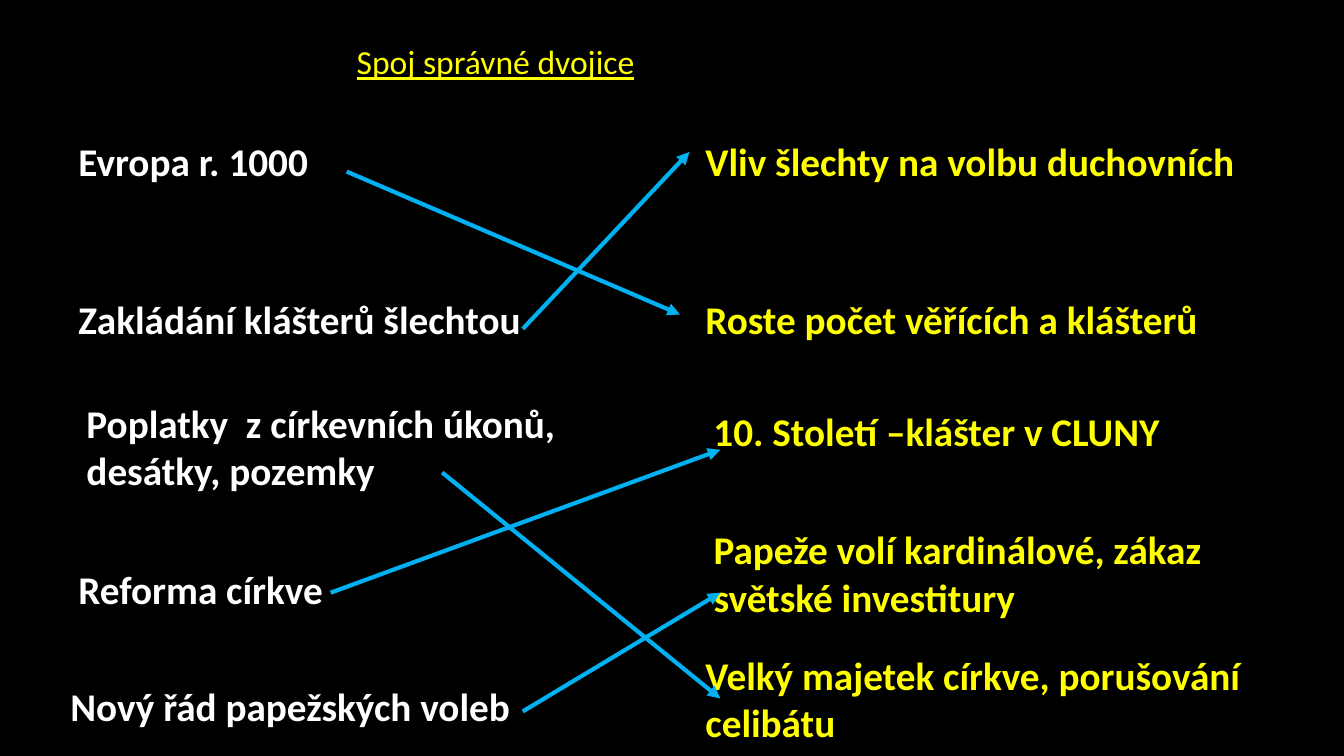
from pptx import Presentation
from pptx import util as u
from pptx.dml.color import RGBColor
from pptx.enum import shapes, text
from pptx.oxml import ns
from lxml import etree

BLACK = RGBColor(0x00, 0x00, 0x00)
WHITE = RGBColor(0xFF, 0xFF, 0xFF)
YELLOW = RGBColor(0xFF, 0xFF, 0x00)
BLUE = RGBColor(0x00, 0xB0, 0xF0)

WIDE, HIGH = u.Inches(13.33), u.Inches(7.5)
ONE, TWO = 7.6, 13.9  # heights of one and two lines of text

# Places are percent of the slide's width and height.
TITLE = ("Spoj správné dvojice", 25.8, 4.8, 23, 6.7)
TERMS = [
    ("Evropa r. 1000", 5.1, 17.5, 32.5, ONE),
    ("Zakládání klášterů šlechtou", 5.1, 38.4, 36, ONE),
    ("Poplatky  z církevních úkonů, desátky, pozemky", 5.7, 52.1, 36.6, TWO),
    ("Reforma církve", 5.1, 74.1, 37.2, ONE),
    ("Nový řád papežských voleb", 4.5, 89.6, 35.4, ONE),
]
MATCHES = [
    ("Vliv šlechty na volbu duchovních", 51.75, 17.5, 42.5, ONE),
    ("Roste počet věřících a klášterů", 51.75, 38.4, 44.9, ONE),
    ("10. Století –klášter v CLUNY", 52.35, 53.2, 38.4, ONE),
    ("Papeže volí kardinálové, zákaz světské investitury",
     52.35, 68.9, 44.3, TWO),
    ("Velký majetek církve, porušování celibátu", 51.75, 85.5, 44.9, TWO),
]
ARROWS = [
    (25.8, 22.7, 50.6, 41.6),
    (38.9, 43.5, 51.3, 20.1),
    (32.9, 62.5, 53.6, 92.4),
    (24.6, 78.4, 53.6, 59.5),
    (38.9, 94.1, 53.6, 78.4),
]


def scale(x, y):
    """Turn percent of the slide into lengths."""
    return int(WIDE * x / 100), int(HIGH * y / 100)


def add_label(slide, words, x, y, w, h, color, size=28, title=False):
    box = slide.shapes.add_textbox(*scale(x, y), *scale(w, h))
    frame = box.text_frame
    frame.text = words
    frame.word_wrap = True
    frame.auto_size = text.MSO_AUTO_SIZE.SHAPE_TO_FIT_TEXT
    font = frame.paragraphs[0].runs[0].font
    font.name = "Calibri"
    font.size = u.Pt(size)
    font.color.rgb = color
    font.bold = not title
    font.underline = title


def add_arrow(slide, x1, y1, x2, y2):
    arrow = slide.shapes.add_connector(
        shapes.MSO_CONNECTOR.STRAIGHT, *scale(x1, y1), *scale(x2, y2))
    arrow.line.color.rgb = BLUE
    arrow.line.width = u.Pt(3)
    line = arrow.line._get_or_add_ln()
    etree.SubElement(line, ns.qn("a:tailEnd"), type="triangle")
    etree.SubElement(arrow._element.spPr, ns.qn("a:effectLst"))


def main():
    deck = Presentation()
    deck.slide_width, deck.slide_height = WIDE, HIGH
    slide = deck.slides.add_slide(deck.slide_layouts[6])
    fill = slide.background.fill
    fill.solid()
    fill.fore_color.rgb = BLACK

    add_label(slide, *TITLE, YELLOW, size=24, title=True)
    for term in TERMS:
        add_label(slide, *term, WHITE)
    for match in MATCHES:
        add_label(slide, *match, YELLOW)
    for ends in ARROWS:
        add_arrow(slide, *ends)
    deck.save("out.pptx")


if __name__ == "__main__":
    main()
